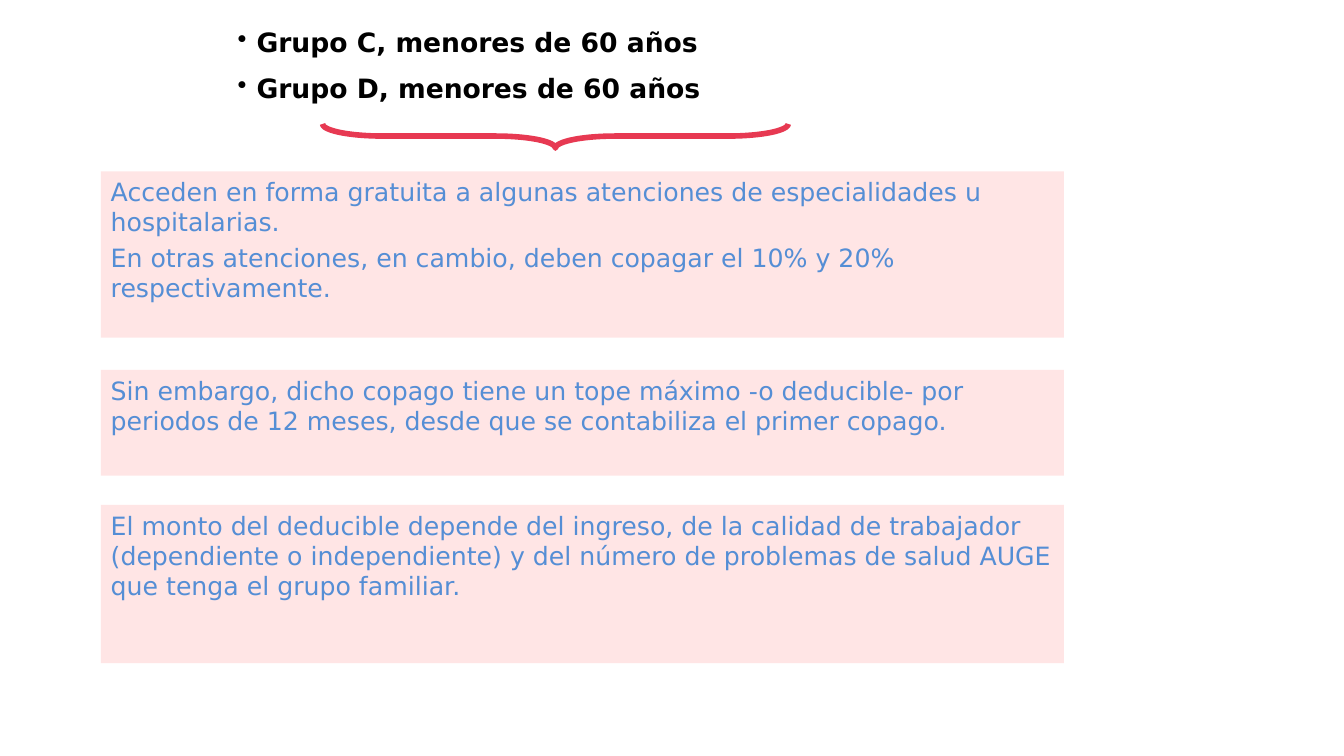
from lxml import etree
from pptx import Presentation
from pptx.dml.color import RGBColor
from pptx.enum import shapes, text
from pptx.oxml.ns import qn
from pptx.util import Pt

# Content
GROUPS = ["Grupo C, menores de 60 años", "Grupo D, menores de 60 años"]
PANELS = [  # top, height, paragraphs
    (122.4, 118.8, [
        "Acceden en forma gratuita a algunas atenciones de especialidades u hospitalarias.",
        "En otras atenciones, en cambio, deben copagar el 10% y 20% respectivamente."]),
    (264.24, 75.6, [
        "Sin embargo, dicho copago tiene un tope máximo -o deducible- por periodos "
        "de 12 meses, desde que se contabiliza el primer copago."]),
    (360.72, 113.04, [
        "El monto del deducible depende del ingreso, de la calidad de trabajador "
        "(dependiente o independiente) y del número de problemas de salud AUGE "
        "que tenga el grupo familiar."]),
]
COLORS = {"panel": "FFCCCC", "body": "558ED5", "heading": "000000", "brace": "E73952"}
PANEL_LEFT, PANEL_WIDTH = 72, 688
BULLET_INDENT = 13.5
HEADING = {"size": Pt(19), "bold": True, "name": "DejaVu Sans"}
BODY = {"size": Pt(18), "bold": False, "name": "DejaVu Sans"}


def color(key):
    return RGBColor.from_string(COLORS[key])


def write(shape, lines, font, color_key, gap):
    frame = shape.text_frame
    frame.word_wrap = True
    frame.vertical_anchor = text.MSO_ANCHOR.TOP
    for i, line in enumerate(lines):
        para = frame.paragraphs[0] if i == 0 else frame.add_paragraph()
        para.alignment = text.PP_ALIGN.LEFT
        para.space_before = Pt(gap)
        span = para.add_run()
        span.text = line
        for name, value in font.items():
            setattr(span.font, name, value)
        span.font.color.rgb = color(color_key)
    return frame


deck = Presentation()
deck.slide_width, deck.slide_height = Pt(960), Pt(540)
page = deck.slides.add_slide(deck.slide_layouts[6])

# Explanation panels
for top, height, lines in PANELS:
    panel = page.shapes.add_shape(shapes.MSO_SHAPE.RECTANGLE, Pt(PANEL_LEFT), Pt(top),
                                  Pt(PANEL_WIDTH), Pt(height))
    panel.shadow.inherit = False
    panel.fill.solid()
    panel.fill.fore_color.rgb = color("panel")
    tint = panel.fill._xPr.find(qn("a:solidFill"))[0]
    etree.SubElement(tint, qn("a:alpha")).set("val", "50000")
    panel.line.fill.background()
    write(panel, lines, BODY, "body", 3.6)

# Bulleted groups
groups = page.shapes.add_textbox(Pt(162.72), Pt(15.12), Pt(506), Pt(64.8))
frame = write(groups, GROUPS, HEADING, "heading", 10)
for para in frame.paragraphs:
    props = para._p.get_or_add_pPr()
    props.set("marL", str(Pt(BULLET_INDENT)))
    props.set("indent", str(-Pt(BULLET_INDENT)))
    etree.SubElement(props, qn("a:buChar")).set("char", "•")

# Brace pointing down to the panels
brace = page.shapes.add_shape(shapes.MSO_SHAPE.RIGHT_BRACE, Pt(388.08), Pt(-69.12),
                              Pt(17.28), Pt(332.64))
brace.rotation = 90
brace.adjustments[0], brace.adjustments[1] = 2.48, 0.5
brace.shadow.inherit = False
brace.fill.background()
brace.line.color.rgb = color("brace")
brace.line.width = Pt(4)

deck.save("out.pptx")
